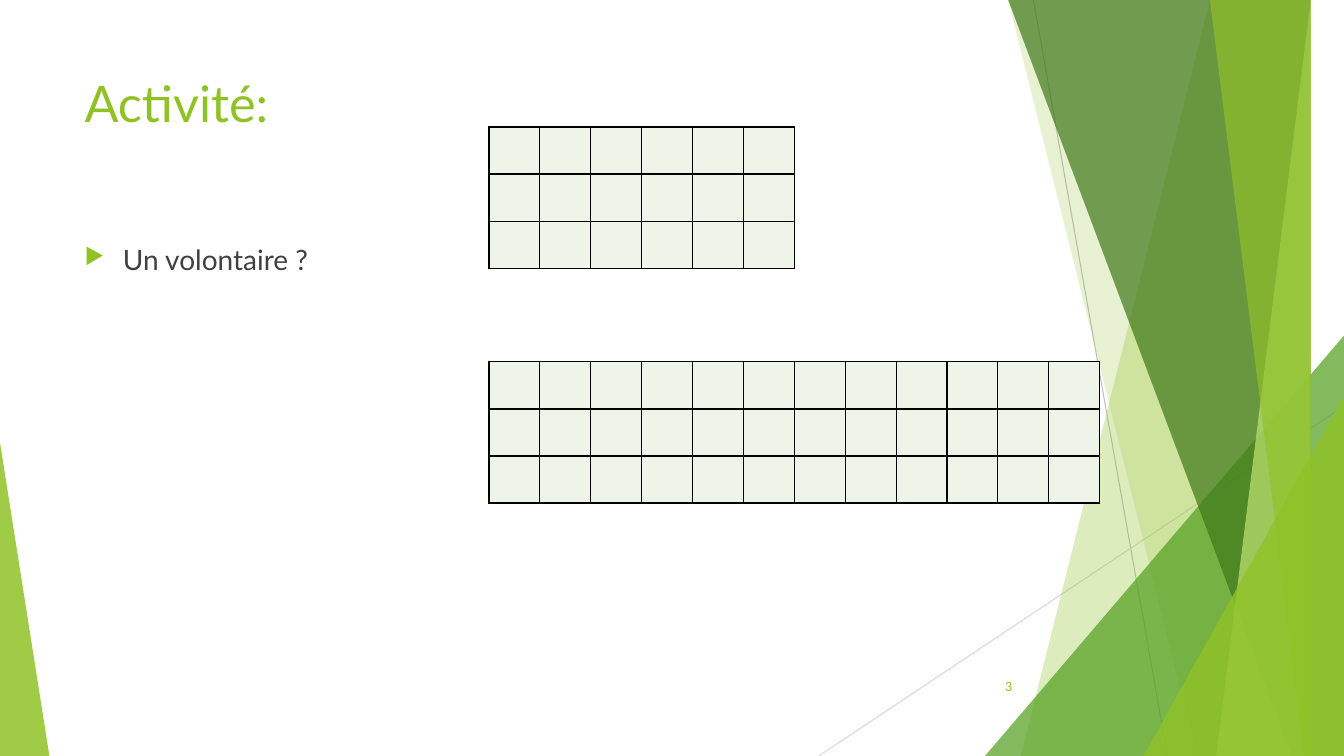
from lxml import etree
from pptx import Presentation
from pptx import util as u
from pptx.dml.color import RGBColor
from pptx.enum import shapes, text
from pptx.oxml.ns import qn

THEME = {
    "font": "Lato", "title": 36, "body": 20, "number": 9,
    "lime": "90C226", "pale": "C0E474", "green": "54A021", "dark": "3F7819",
    "text": "404040", "cell": "EEF4E8", "border": "000000",
    "gray": "BFBFBF", "light": "D9D9D9",
}
W, H, TOP = 13.33, 7.5, -0.01
RAYS = [
    ((10.25, 0), (11.58, H), "gray"),
    ((W, 4.03), (8.12, H), "light"),
]
BANDS = [
    (12.28, 10.04, "lime", 30),
    (10.5, 11.83, "lime", 20),
    (9.77, 3.33, 3.56, 1, "green", 72),
    (10.21, 12.91, "dark", 70),
    (13.03, 11.92, "pale", 70),
    (11.96, 13.18, "lime", 65),
    (11.34, 3.93, 1.99, 1, "lime", 80),
    (0, 4.39, 0.49, 0, "lime", 85),
]
TITLE = "Activité:"
BULLET = "Un volontaire ?"
NUMBER = "3"
GRIDS = [(3.59, 12), (1.26, 6)]
GRID_LEFT, GRID_ROWS, CELL_W, CELL_H = 4.85, 3, 0.505, 0.467


def color(name):
    return RGBColor.from_string(THEME[name])


def add(parent, tag, **attrs):
    return etree.SubElement(parent, qn(tag), attrs)


def add_ray(s, start, end, name):
    points = [u.Inches(v) for v in start + end]
    ray = s.shapes.add_connector(shapes.MSO_CONNECTOR.STRAIGHT, *points)
    ray.line.color.rgb = color(name)
    ray.line.width = u.Pt(0.75)
    add(ray._element.spPr, "a:effectLst")


def add_band(s, *geometry, name, alpha):
    if len(geometry) == 2:
        top_x, bottom_x = geometry
        outline = s.shapes.build_freeform(top_x, TOP, scale=u.Inches(1))
        outline.add_line_segments([(W, TOP), (W, H), (bottom_x, H)], close=True)
        sp = outline.convert_to_shape()
    else:
        left, top, width, apex = geometry
        box = [u.Inches(v) for v in (left, top, width, H - top)]
        sp = s.shapes.add_shape(shapes.MSO_SHAPE.ISOSCELES_TRIANGLE, *box)
        sp.adjustments[0] = apex
    sp.shadow.inherit = False
    sp.line.fill.background()
    sp.fill.solid()
    sp.fill.fore_color.rgb = color(name)
    clr = sp._element.spPr.find(".//" + qn("a:srgbClr"))
    add(clr, "a:alpha", val=str(alpha * 1000))


def add_text(s, box, words, size, name, bullet=False):
    tf = s.shapes.add_textbox(*[u.Inches(v) for v in box]).text_frame
    tf.word_wrap = True
    p = tf.paragraphs[0]
    p.text = words
    if bullet:
        p.space_before = u.Pt(10)
        pPr = p._p.get_or_add_pPr()
        pPr.set("marL", str(u.Inches(0.38)))
        pPr.set("indent", str(u.Inches(-0.38)))
        add(add(pPr, "a:buClr"), "a:srgbClr", val=THEME["lime"])
        add(pPr, "a:buSzPct", val="80000")
        add(pPr, "a:buChar", char="▶")
    p.font.name = THEME["font"]
    p.font.size = u.Pt(THEME[size])
    p.font.color.rgb = color(name)
    return tf


def add_grid(s, top, columns):
    box = (GRID_LEFT, top, columns * CELL_W, GRID_ROWS * CELL_H)
    frame = s.shapes.add_table(GRID_ROWS, columns, *[u.Inches(v) for v in box])
    table = frame.table
    table.first_row = table.horz_banding = False
    for col in table.columns:
        col.width = u.Inches(CELL_W)
    for row in table.rows:
        row.height = u.Inches(CELL_H)
    for cell in table.iter_cells():
        tcPr = cell._tc.get_or_add_tcPr()
        for side in ("a:lnL", "a:lnR", "a:lnT", "a:lnB"):
            ln = add(tcPr, side, w=str(u.Pt(1)))
            add(add(ln, "a:solidFill"), "a:srgbClr", val=THEME["border"])
        cell.fill.solid()
        cell.fill.fore_color.rgb = color("cell")


def main():
    prs = Presentation()
    prs.slide_width, prs.slide_height = u.Inches(W), u.Inches(H)
    s = prs.slides.add_slide(prs.slide_layouts[6])
    for ray in RAYS:
        add_ray(s, *ray)
    for *geometry, name, alpha in BANDS:
        add_band(s, *geometry, name=name, alpha=alpha)
    add_text(s, (0.74, 0.67, 9.4, 1.44), TITLE, "title", "lime")
    add_text(s, (0.74, 2.36, 9.4, 4.24), BULLET, "body", "text", bullet=True)
    tf = add_text(s, (9.39, 6.61, 0.75, 0.4), NUMBER, "number", "lime")
    tf.vertical_anchor = text.MSO_ANCHOR.MIDDLE
    tf.paragraphs[0].alignment = text.PP_ALIGN.RIGHT
    for top, columns in GRIDS:
        add_grid(s, top, columns)
    prs.save("out.pptx")


if __name__ == "__main__":
    main()
